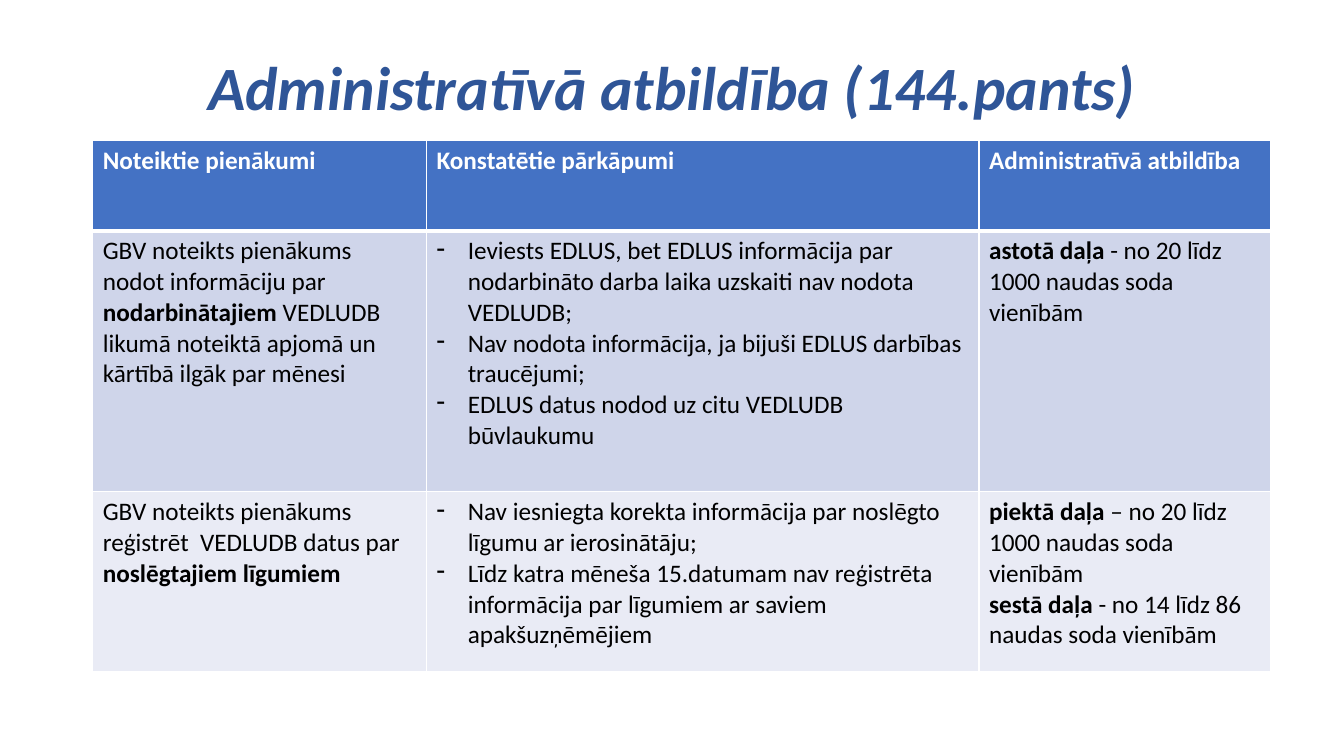
from lxml import etree
from pptx import Presentation
from pptx import util as u
from pptx.dml.color import RGBColor
from pptx.enum import text
from pptx.oxml import ns

NAVY = RGBColor(0x2F, 0x55, 0x97)
BLUE = RGBColor(0x44, 0x72, 0xC4)
PALE_BLUE = RGBColor(0xCF, 0xD5, 0xEA)
PALE_GREY = RGBColor(0xE9, 0xEB, 0xF5)
WHITE = RGBColor(0xFF, 0xFF, 0xFF)
BLACK = RGBColor(0, 0, 0)

COLUMN_WIDTHS = [3.31, 5.48, 2.89]
ROW_HEIGHTS = [0.9, 2.59, 1.78]
ROW_STYLES = [(BLUE, WHITE), (PALE_BLUE, BLACK), (PALE_GREY, BLACK)]
VIOLATIONS_COLUMN = 1

LIABILITY = [
    [
        [[("Noteiktie pienākumi", True)]],
        [[("Konstatētie pārkāpumi", True)]],
        [[("Administratīvā atbildība", True)]],
    ],
    [
        [[("GBV noteikts pienākums nodot informāciju par ", False),
          ("nodarbinātajiem", True),
          (" VEDLUDB likumā noteiktā apjomā un kārtībā ilgāk par mēnesi", False)]],
        [[("Ieviests EDLUS, bet EDLUS informācija par nodarbināto darba laika "
           "uzskaiti nav nodota VEDLUDB;", False)],
         [("Nav nodota informācija, ja bijuši EDLUS darbības traucējumi;", False)],
         [("EDLUS datus nodod uz citu VEDLUDB būvlaukumu", False)]],
        [[("astotā daļa ", True), ("- no 20 līdz 1000 naudas soda vienībām", False)]],
    ],
    [
        [[("GBV noteikts pienākums reģistrēt  VEDLUDB datus par ", False),
          ("noslēgtajiem līgumiem", True)]],
        [[("Nav iesniegta korekta informācija par noslēgto līgumu ar ierosinātāju;", False)],
         [("Līdz katra mēneša 15.datumam nav reģistrēta informācija par līgumiem "
           "ar saviem apakšuzņēmējiem", False)]],
        [[("piektā daļa ", True), ("– no 20 līdz 1000 naudas soda vienībām", False)],
         [("sestā daļa ", True), ("- no 14 līdz 86 naudas soda vienībām", False)]],
    ],
]


class SlideBuilder:
    font_name = "Calibri"
    body_size = 18
    title_size = 44

    def __init__(self, slide):
        self.slide = slide

    def style(self, paragraph, size, color):
        font = paragraph.font
        font.name = self.font_name
        font.size = u.Pt(size)
        font.color.rgb = color
        return font

    def title(self, wording, left, top, width, height):
        box = self.slide.shapes.add_textbox(
            u.Inches(left), u.Inches(top), u.Inches(width), u.Inches(height))
        frame = box.text_frame
        frame.word_wrap = True
        frame.vertical_anchor = text.MSO_ANCHOR.MIDDLE
        heading = frame.paragraphs[0]
        heading.text = wording
        heading.alignment = text.PP_ALIGN.CENTER
        heading.line_spacing = 0.9
        font = self.style(heading, self.title_size, NAVY)
        font.bold = font.italic = True

    def dash(self, paragraph):
        properties = paragraph._p.get_or_add_pPr()
        indent = u.Inches(0.31)
        properties.set("marL", str(indent))
        properties.set("indent", str(-indent))
        etree.SubElement(properties, ns.qn("a:buChar")).set("char", "-")

    def borders(self, cell, is_header):
        properties = cell._tc.get_or_add_tcPr()
        for side in "LRTB":
            points = 3 if is_header and side == "B" else 1
            line = etree.SubElement(properties, ns.qn(f"a:ln{side}"), w=str(u.Pt(points)))
            fill = etree.SubElement(line, ns.qn("a:solidFill"))
            etree.SubElement(fill, ns.qn("a:srgbClr"), val=str(WHITE))

    def cell(self, cell, paragraphs, fill_color, text_color, is_header, dashed):
        self.borders(cell, is_header)
        cell.fill.solid()
        cell.fill.fore_color.rgb = fill_color
        frame = cell.text_frame
        for index, parts in enumerate(paragraphs):
            paragraph = frame.add_paragraph() if index else frame.paragraphs[0]
            if dashed:
                self.dash(paragraph)
            font = self.style(paragraph, self.body_size, text_color)
            weights = {bold for _, bold in parts}
            if len(weights) == 1:
                font.bold = parts[0][1]
            for wording, bold in parts:
                run = paragraph.add_run()
                run.text = wording
                if len(weights) > 1:
                    run.font.bold = bold

    def table(self, rows, left, top):
        table = self.slide.shapes.add_table(
            len(rows), len(COLUMN_WIDTHS), u.Inches(left), u.Inches(top),
            u.Inches(sum(COLUMN_WIDTHS)), u.Inches(sum(ROW_HEIGHTS))).table
        for column, width in zip(table.columns, COLUMN_WIDTHS):
            column.width = u.Inches(width)
        for row, height in zip(table.rows, ROW_HEIGHTS):
            row.height = u.Inches(height)
        for r, (cells, colors) in enumerate(zip(rows, ROW_STYLES)):
            for c, paragraphs in enumerate(cells):
                is_header = r == 0
                dashed = not is_header and c == VIOLATIONS_COLUMN
                self.cell(table.cell(r, c), paragraphs, *colors, is_header, dashed)


def main():
    deck = Presentation()
    deck.slide_width = u.Inches(13.33)
    deck.slide_height = u.Inches(7.5)
    builder = SlideBuilder(deck.slides.add_slide(deck.slide_layouts[6]))
    builder.title("Administratīvā atbildība (144.pants)", 0.92, 0.4, 11.5, 0.99)
    builder.table(LIABILITY, 0.92, 1.39)
    deck.save("out.pptx")


if __name__ == "__main__":
    main()
